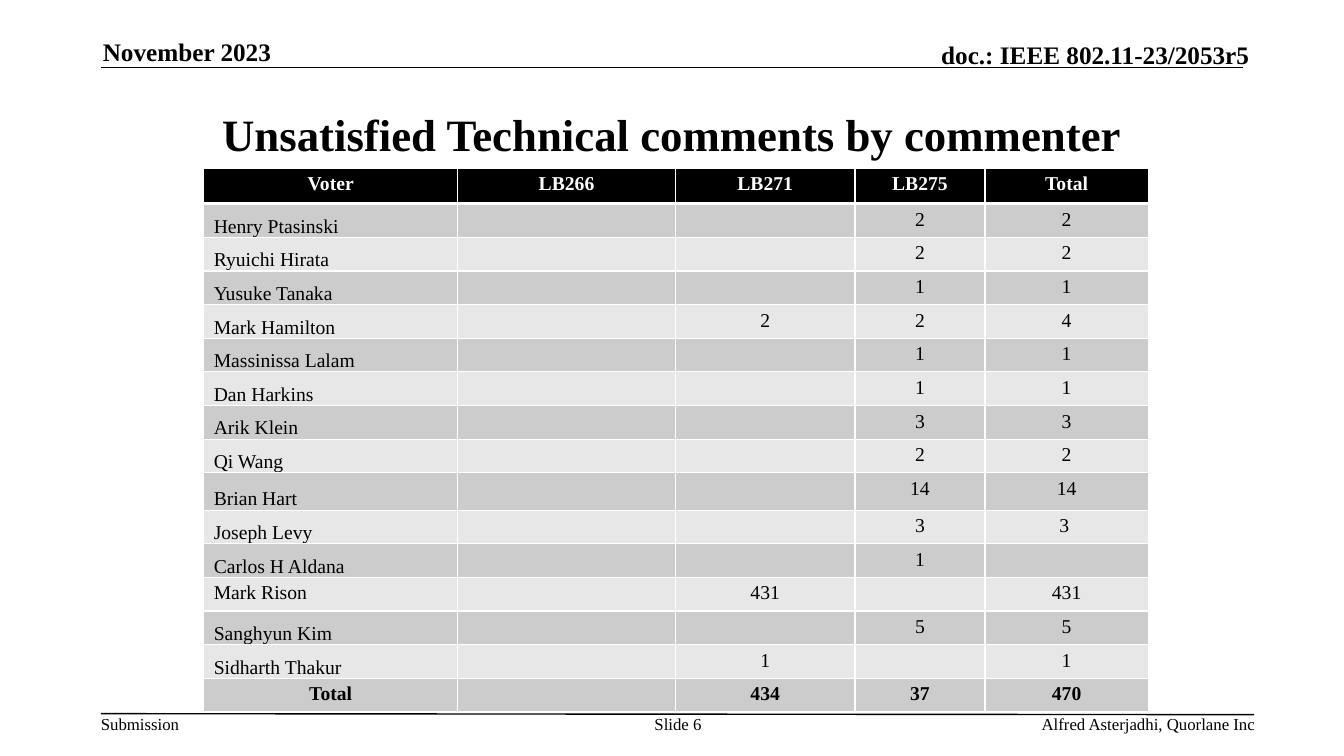
import pptx
import pptx.util
import pptx.dml.color
import pptx.enum.shapes
import pptx.enum.text
import pptx.oxml
import pptx.oxml.ns

Inches = pptx.util.Inches
Pt = pptx.util.Pt
RGBColor = pptx.dml.color.RGBColor
Align = pptx.enum.text.PP_ALIGN
Anchor = pptx.enum.text.MSO_ANCHOR

BLACK = RGBColor(0x00, 0x00, 0x00)
WHITE = RGBColor(0xFF, 0xFF, 0xFF)
DARK_BAND = RGBColor(0xCC, 0xCC, 0xCC)
LIGHT_BAND = RGBColor(0xE7, 0xE7, 0xE7)
FONT = "Times New Roman"


def style_paragraph(para, size, color, bold, align):
    para.alignment = align
    for span in para.runs:
        span.font.name = FONT
        span.font.size = Pt(size)
        span.font.color.rgb = color
        span.font.bold = bold


def add_border(cell, side, width):
    border = pptx.oxml.parse_xml(
        f'<a:{side} {pptx.oxml.ns.nsdecls("a")} w="{Pt(width)}">'
        f'<a:solidFill><a:srgbClr val="{WHITE}"/></a:solidFill></a:{side}>')
    cell_properties = cell._tc.get_or_add_tcPr()
    # Borders come before the fill
    cell_properties.insert(len(cell_properties) - 1, border)


deck = pptx.Presentation()
deck.slide_width = Inches(13.33)
deck.slide_height = Inches(7.5)
page = deck.slides.add_slide(deck.slide_layouts[6])

# Header and footer rules
for x1, y1, x2, y2 in [(1, 0.67, 12.33, 0.67), (1, 7.08, 12.44, 7.09)]:
    rule = page.shapes.add_connector(
        pptx.enum.shapes.MSO_CONNECTOR.STRAIGHT,
        Inches(x1), Inches(y1), Inches(x2), Inches(y2))
    rule.line.color.rgb = BLACK
    rule.line.width = Pt(1)
    rule._element.spPr.append(
        pptx.oxml.parse_xml(f'<a:effectLst {pptx.oxml.ns.nsdecls("a")}/>'))

# Title, header and footer texts
texts = [
    ("Unsatisfied Technical comments by commenter",
     1, 0.75, 11.33, 1.16, 32, True, Align.CENTER, Anchor.MIDDLE),
    ("November 2023", 1.02, 0.36, 2.73, 0.3, 18, True, Align.LEFT, Anchor.BOTTOM),
    ("doc.: IEEE 802.11-23/2053r5",
     7.29, 0.39, 5.1, 0.3, 18, True, Align.RIGHT, Anchor.BOTTOM),
    ("Submission", 1, 7.08, 0.79, 0.2, 12, False, Align.LEFT, Anchor.TOP),
    ("Slide 6", 6.34, 7.08, 0.77, 0.4, 12, False, Align.CENTER, Anchor.TOP),
    ("Alfred Asterjadhi, Quorlane Inc",
     7.81, 7.08, 4.64, 0.2, 12, False, Align.RIGHT, Anchor.TOP),
]
for text, left, top, width, height, size, bold, align, anchor in texts:
    box = page.shapes.add_textbox(
        Inches(left), Inches(top), Inches(width), Inches(height))
    frame = box.text_frame
    frame.text = text
    frame.word_wrap = True
    frame.vertical_anchor = anchor
    frame.margin_left = frame.margin_right = 0
    frame.margin_top = frame.margin_bottom = 0
    style_paragraph(frame.paragraphs[0], size, BLACK, bold, align)

# Comment counts by voter
rows = [
    ("Voter", "LB266", "LB271", "LB275", "Total"),
    ("Henry Ptasinski", "", "", "2", "2"),
    ("Ryuichi Hirata", "", "", "2", "2"),
    ("Yusuke Tanaka", "", "", "1", "1"),
    ("Mark Hamilton", "", "2", "2", "4"),
    ("Massinissa Lalam", "", "", "1", "1"),
    ("Dan Harkins", "", "", "1", "1"),
    ("Arik Klein", "", "", "3", "3"),
    ("Qi Wang", "", "", "2", "2"),
    ("Brian Hart", "", "", "14", "14"),
    ("Joseph Levy", "", "", "3", "3 "),
    ("Carlos H Aldana", "", "", "1", ""),
    ("Mark Rison", "", "431", "", "431"),
    ("Sanghyun Kim", "", "", "5", "5"),
    ("Sidharth Thakur", "", "1", "", "1"),
    ("Total", "", "434", "37", "470"),
]
column_widths = [2.52, 2.16, 1.78, 1.29, 1.62]
row_heights = {"Voter": 0.35, "Brian Hart": 0.37}
last_row = len(rows) - 1

table = page.shapes.add_table(
    len(rows), len(column_widths),
    Inches(2.02), Inches(1.67), Inches(9.37), Inches(5.2)).table
for column, width in zip(table.columns, column_widths):
    column.width = Inches(width)

for r, values in enumerate(rows):
    table.rows[r].height = Inches(row_heights.get(values[0], 0.32))
    is_header = r == 0
    is_voter_row = 0 < r < last_row
    for c, value in enumerate(values):
        cell = table.cell(r, c)
        cell.text = value
        is_name = is_voter_row and c == 0
        style_paragraph(
            cell.text_frame.paragraphs[0], 14, WHITE if is_header else BLACK,
            not is_voter_row, Align.LEFT if is_name else Align.CENTER)

        # Names sit on the row's lower edge, except one
        if is_name and value != "Mark Rison":
            cell.vertical_anchor = Anchor.BOTTOM
            cell.margin_top = Inches(0.01)
            cell.margin_bottom = 0
        elif not value:
            cell.margin_top = cell.margin_bottom = 0

        cell.fill.solid()
        band = DARK_BAND if r % 2 else LIGHT_BAND
        cell.fill.fore_color.rgb = BLACK if is_header else band
        for side in ("lnL", "lnR", "lnT", "lnB"):
            under_header = (r, side) in ((0, "lnB"), (1, "lnT"))
            add_border(cell, side, 3 if under_header else 1)

deck.save("out.pptx")
